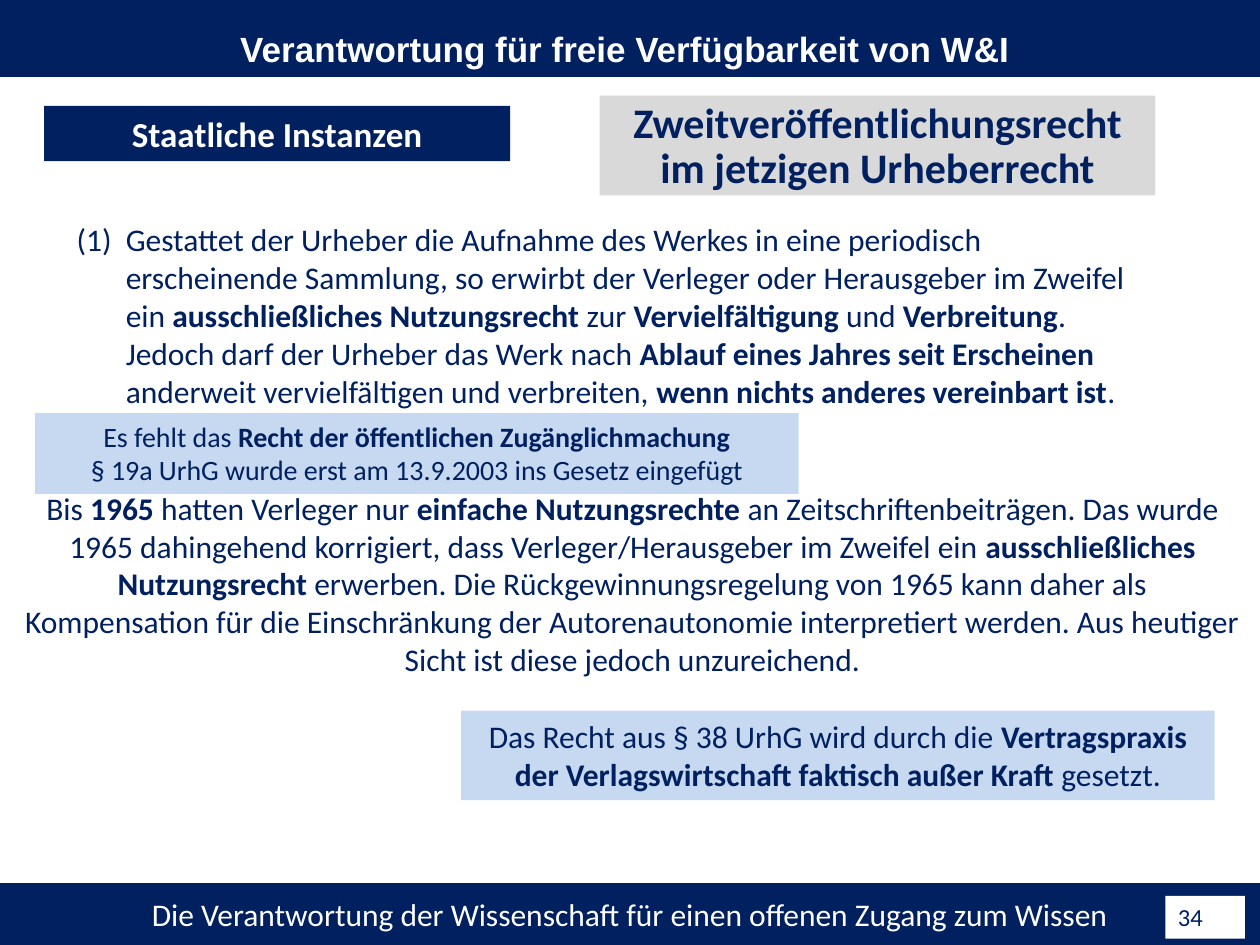
from dataclasses import dataclass
from lxml import etree
from pptx import Presentation
from pptx.dml.color import RGBColor
from pptx.enum.shapes import MSO_SHAPE
from pptx.enum.text import MSO_ANCHOR, PP_ALIGN
from pptx.oxml.ns import qn
from pptx.util import Inches, Pt

RECT = MSO_SHAPE.RECTANGLE
TOP, MIDDLE = MSO_ANCHOR.TOP, MSO_ANCHOR.MIDDLE
LEFT, CENTER = PP_ALIGN.LEFT, PP_ALIGN.CENTER


@dataclass(frozen=True)
class Theme:
    navy: RGBColor = RGBColor(0x00, 0x20, 0x60)
    white: RGBColor = RGBColor(0xFF, 0xFF, 0xFF)
    gray: RGBColor = RGBColor(0xD9, 0xD9, 0xD9)
    pale: RGBColor = RGBColor(0xC6, 0xD9, 0xF1)
    body: str = "Calibri"
    head: str = "Arial"
    big: int = 24
    title: int = 20
    text: int = 18
    note: int = 16
    small: int = 14


THEME = Theme()

CLAUSE = (
    "Gestattet der Urheber die Aufnahme des Werkes in eine periodisch "
    "erscheinende Sammlung, so erwirbt der Verleger oder Herausgeber im Zweifel "
    "ein *ausschließliches Nutzungsrecht *zur *Vervielfältigung* und "
    "*Verbreitung*. Jedoch darf der Urheber das Werk nach "
    "*Ablauf eines Jahres seit Erscheinen *anderweit vervielfältigen und "
    "verbreiten, *wenn nichts anderes vereinbart ist*."
)
HISTORY = (
    "Bis *1965* hatten Verleger nur *einfache Nutzungsrechte *an "
    "Zeitschriftenbeiträgen. Das wurde 1965 dahingehend korrigiert, dass "
    "Verleger/Herausgeber im Zweifel ein *ausschließliches Nutzungsrecht "
    "*erwerben. Die Rückgewinnungsregelung von 1965 kann daher als Kompensation "
    "für die Einschränkung der Autorenautonomie interpretiert werden. Aus "
    "heutiger Sicht ist diese jedoch unzureichend."
)
GAP = (
    "Es fehlt das *Recht der öffentlichen Zugänglichmachung*\n"
    "§ 19a UrhG wurde erst am 13.9.2003 ins Gesetz eingefügt"
)
RESULT = (
    "Das Recht aus § 38 UrhG wird durch die *Vertragspraxis der "
    "Verlagswirtschaft faktisch außer Kraft *gesetzt."
)


def apply(target, values):
    for name, value in values.items():
        setattr(target, name, value)


def write(frame, text, size, color, font=THEME.body, align=CENTER, space=None):
    """Fill a frame: a line break starts a paragraph, asterisks toggle bold."""
    frame.word_wrap = True
    for i, line in enumerate(text.split("\n")):
        para = frame.add_paragraph() if i else frame.paragraphs[0]
        apply(para, {"alignment": align, "line_spacing": space})
        for j, part in enumerate(line.split("*")):
            if part:
                run = para.add_run()
                run.text = part
                apply(run.font, {"size": Pt(size), "name": font, "bold": j % 2 == 1})
                run.font.color.rgb = color


def panel(slide, box, fill, text, size, color=THEME.navy, anchor=TOP, **style):
    shape = slide.shapes.add_shape(RECT, *map(Inches, box))
    shape.shadow.inherit = False
    shape.fill.solid()
    shape.fill.fore_color.rgb = fill
    shape.line.fill.background()
    shape.text_frame.vertical_anchor = anchor
    write(shape.text_frame, text, size, color, **style)
    return shape


def prose(slide, box, text, **style):
    frame = slide.shapes.add_textbox(*map(Inches, box)).text_frame
    write(frame, text, THEME.text, THEME.navy, **style)
    return frame


def number(para, indent):
    """Number a paragraph as (1) with a hanging indent."""
    props = para._p.get_or_add_pPr()
    props.set("marL", str(Inches(indent)))
    props.set("indent", str(-Inches(indent)))
    etree.SubElement(props, qn("a:buAutoNum"), type="arabicParenBoth")


def footer(slide, box):
    left, top, width, _ = box
    bar = panel(slide, box, THEME.navy,
                "Die Verantwortung der Wissenschaft für einen offenen Zugang zum Wissen",
                THEME.text, THEME.white, MIDDLE)
    sides = ("left", "top", "right", "bottom")
    apply(bar.text_frame, {f"margin_{side}": 0 for side in sides})
    panel(slide, (left + width - 0.75, top + 0.1, 0.63, 0.34), THEME.white,
          "34", THEME.small, align=LEFT)


def header(slide, box):
    panel(slide, box, THEME.navy, "*Verantwortung für freie Verfügbarkeit von W&I *",
          THEME.title, THEME.white, font=THEME.head, space=1.5)


def topics(slide, box):
    left, top, width, height = box
    panel(slide, (left, top + 0.08, 3.7, 0.44), THEME.navy,
          "*Staatliche Instanzen*", THEME.title, THEME.white)
    panel(slide, (left + width - 4.41, top, 4.41, height), THEME.gray,
          "*Zweitveröffentlichungsrecht im jetzigen Urheberrecht*", THEME.big, space=0.9)


def content(slide, box):
    left, top, width, height = box
    clause = prose(slide, (left + 0.43, top, 8.66, 1.62), CLAUSE, align=LEFT)
    number(clause.paragraphs[0], 0.39)
    panel(slide, (left + 3.58, top + height - 0.71, 5.98, 0.71), THEME.pale,
          RESULT, THEME.text)
    prose(slide, (left, top + 2.13, width, 1.62), HISTORY)
    panel(slide, (left + 0.2, top + 1.58, 6.06, 0.64), THEME.pale, GAP, THEME.note)


def main():
    deck = Presentation()
    apply(deck, {"slide_width": Inches(10), "slide_height": Inches(7.5)})
    slide = deck.slides.add_slide(deck.slide_layouts[6])
    footer(slide, (0, 7.01, 10, 0.49))
    header(slide, (0, 0, 10, 0.61))
    topics(slide, (0.35, 0.76, 8.82, 0.79))
    content(slide, (0.08, 1.7, 9.88, 4.65))
    deck.save("out.pptx")


if __name__ == "__main__":
    main()
